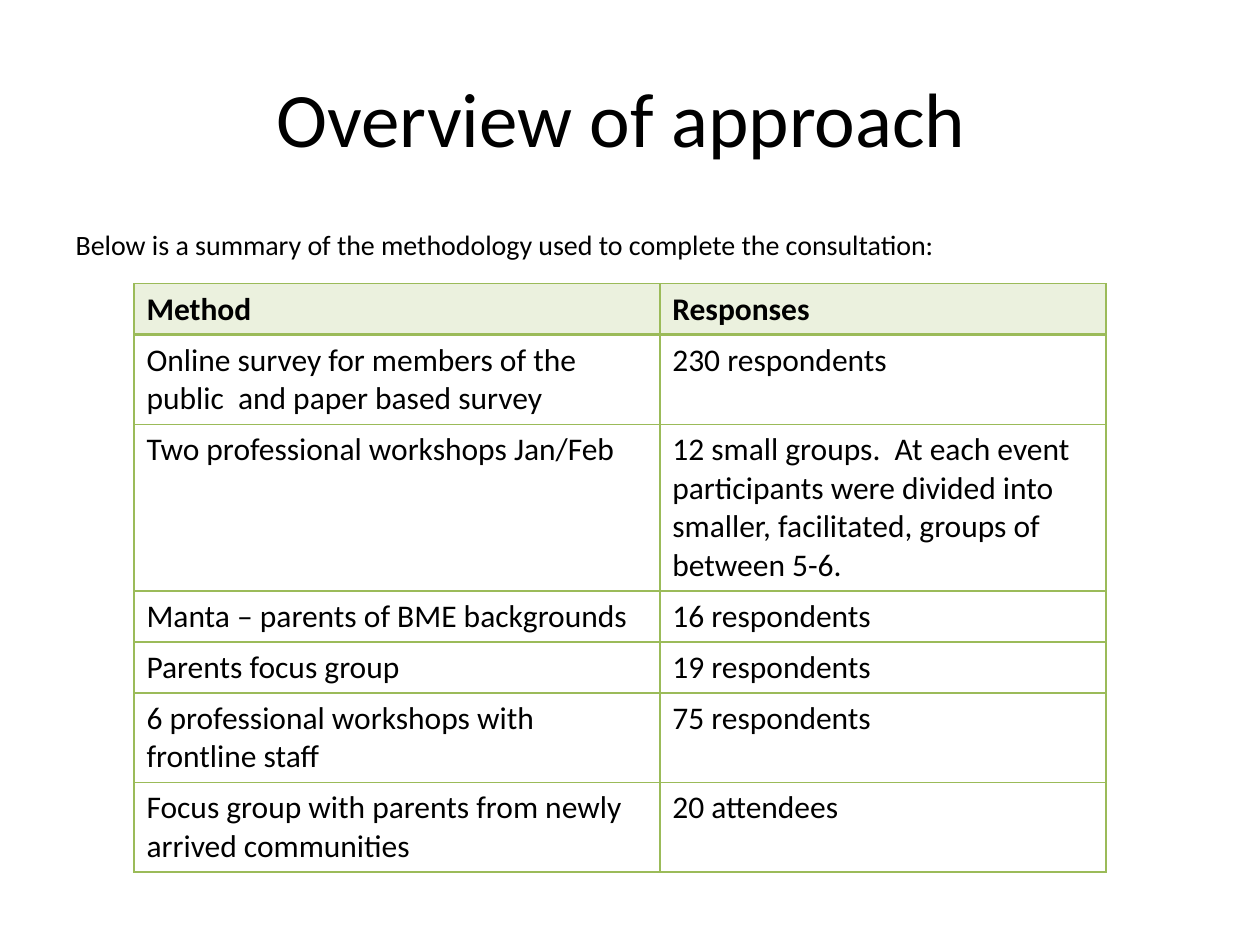
from typing import NamedTuple

from lxml.etree import SubElement
from pptx import Presentation
from pptx.dml.color import RGBColor
from pptx.enum.text import MSO_ANCHOR, PP_ALIGN
from pptx.oxml.ns import qn
from pptx.util import Cm, Pt

FONT = "Calibri"
BLACK, GREEN, PALE = "000000", "9BBB59", "EBF1DE"


class Row(NamedTuple):
    method: str
    reply: str
    lines: int = 1


ROWS = [
    Row("Method", "Responses"),
    Row("Online survey for members of the public  and paper based survey",
        "230 respondents", 2),
    Row("Two professional workshops Jan/Feb",
        "12 small groups.  At each event participants were divided into "
        "smaller, facilitated, groups of between 5-6.", 4),
    Row("Manta – parents of BME backgrounds", "16 respondents"),
    Row("Parents focus group", "19 respondents"),
    Row("6 professional workshops with frontline staff", "75 respondents", 2),
    Row("Focus group with parents from newly arrived communities",
        "20 attendees", 2),
]


def color(code: str) -> RGBColor:
    return RGBColor.from_string(code)


def write(frame, text: str, *, size: float, bold: bool = False,
          align=PP_ALIGN.LEFT, before: float = 0):
    """Put one formatted paragraph in a text frame."""
    para = frame.paragraphs[0]
    para.alignment = align
    para.space_before = Pt(before)
    run = para.add_run()
    run.text = text
    font = run.font
    font.name, font.size, font.bold = FONT, Pt(size), bold
    font.color.rgb = color(BLACK)
    return para


def place(shape, left: float, top: float, width: float, height: float) -> None:
    shape.left, shape.top = Cm(left), Cm(top)
    shape.width, shape.height = Cm(width), Cm(height)


def border(cell, top: float, base: float) -> None:
    """Rule all four sides; side lines are 1 pt wide."""
    props = cell._tc.get_or_add_tcPr()
    sides = {"L": 1, "R": 1, "T": top, "B": base}
    for spot, (side, width) in enumerate(sides.items()):
        line = SubElement(props, qn(f"a:ln{side}"), w=str(Pt(width)))
        fill = SubElement(line, qn("a:solidFill"))
        SubElement(fill, qn("a:srgbClr"), val=GREEN)
        props.insert(spot, line)  # lines come before the cell fill


def draw_table(slide, rows: list[Row]) -> None:
    shape = slide.shapes.add_table(len(rows), 2, Cm(2.7), Cm(5.72),
                                   Cm(19.6), Cm(11.87))
    table = shape.table
    table.first_row = table.horz_banding = False
    for col, width in zip(table.columns, (10.6, 9)):
        col.width = Cm(width)
    for i, row in enumerate(rows):
        table.rows[i].height = Cm(0.26 + 0.77 * row.lines)
        head = i == 0
        for j, text in enumerate((row.method, row.reply)):
            cell = table.cell(i, j)
            write(cell.text_frame, text, size=18, bold=head)
            if head:
                cell.fill.solid()
                cell.fill.fore_color.rgb = color(PALE)
            else:
                cell.fill.background()
            border(cell, top=2 if i == 1 else 1, base=2 if head else 1)


def main() -> None:
    deck = Presentation()
    deck.slide_width, deck.slide_height = Cm(25.4), Cm(19.05)
    slide = deck.slides.add_slide(deck.slide_layouts[1])

    # Title
    title = slide.shapes.title
    place(title, 1.27, 0.76, 22.86, 3.18)
    title.text_frame.vertical_anchor = MSO_ANCHOR.MIDDLE
    write(title.text_frame, "Overview of approach ", size=44,
          align=PP_ALIGN.CENTER)

    # Lead-in line, without a bullet
    body = slide.placeholders[1]
    place(body, 1.27, 4.45, 22.86, 12.57)
    para = write(body.text_frame, "Below is a summary of the methodology "
                 "used to complete the consultation:", size=16, before=3.2)
    props = para._p.get_or_add_pPr()
    props.set("marL", "0")
    props.set("indent", "0")
    SubElement(props, qn("a:buNone"))

    # Methods and responses
    draw_table(slide, ROWS)
    deck.save("out.pptx")


if __name__ == "__main__":
    main()
